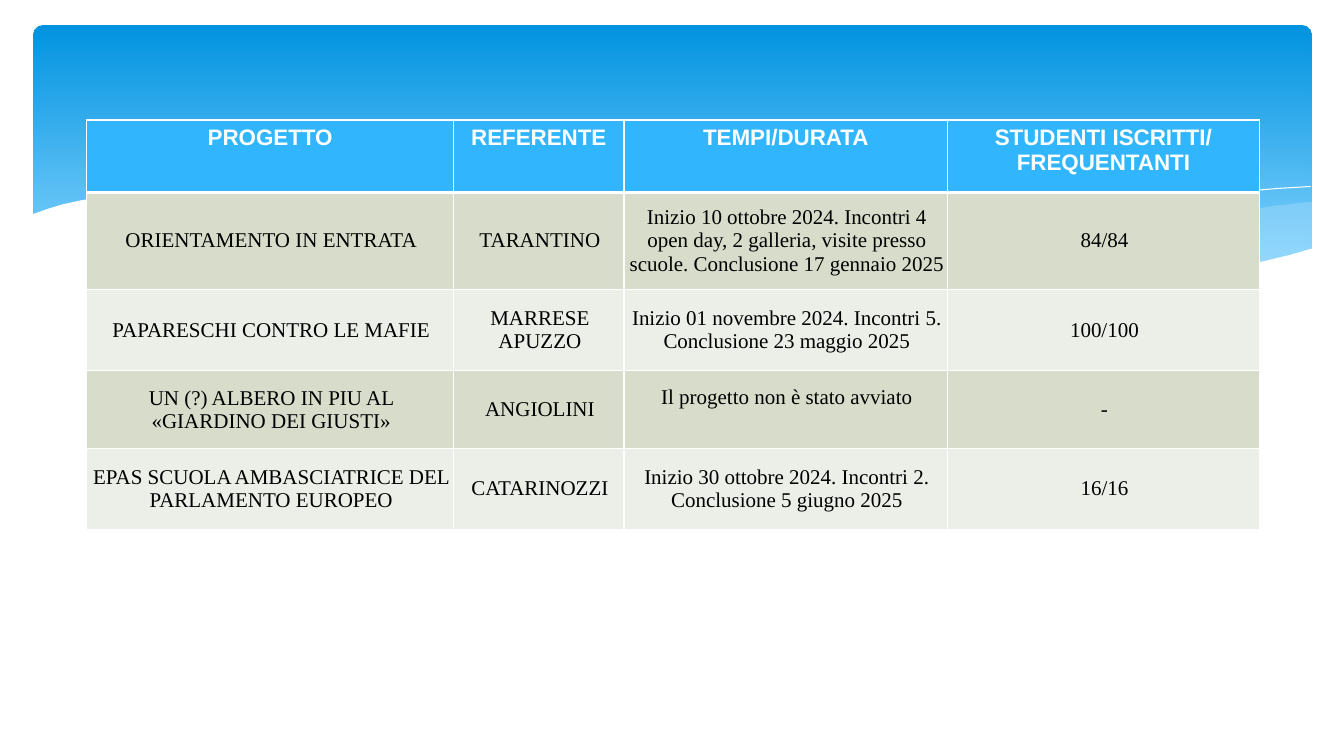
from lxml import etree
from pptx import Presentation
from pptx.dml.color import RGBColor
from pptx.enum.shapes import MSO_SHAPE
from pptx.enum.text import MSO_ANCHOR, PP_ALIGN
from pptx.oxml.ns import qn
from pptx.util import Inches, Pt

ROUNDED = MSO_SHAPE.ROUNDED_RECTANGLE
CENTER = PP_ALIGN.CENTER
TOP, MIDDLE = MSO_ANCHOR.TOP, MSO_ANCHOR.MIDDLE

WHITE = RGBColor(0xFF, 0xFF, 0xFF)
BLACK = RGBColor(0x00, 0x00, 0x00)
DEEP = RGBColor(0x02, 0x93, 0xE0)
SKY = RGBColor(0x83, 0xD3, 0xFE)
MIST = RGBColor(0xC6, 0xE7, 0xFC)
HEAD = RGBColor(0x31, 0xB6, 0xFD)
SAGE = RGBColor(0xD8, 0xDD, 0xCB)
PALE = RGBColor(0xEC, 0xEF, 0xE7)

RIGHT_WAVE = [
    (13.01, 2), (12.65, 2.04), (12.27, 2.1), (11.88, 2.16), (11.47, 2.23),
    (10.73, 2.37), (10.05, 2.48), (9.41, 2.57), (8.82, 2.65), (9.21, 2.69),
    (9.58, 2.72), (9.93, 2.75), (10.25, 2.77), (10.71, 2.78), (11.13, 2.77),
    (11.51, 2.75), (11.86, 2.72), (12.18, 2.67), (12.47, 2.62),
    (12.66, 2.57), (12.84, 2.52), (13.01, 2.47),
]
MID_WAVE = [
    (11.9, 2.73), (11.54, 2.69), (11.16, 2.65), (10.76, 2.6), (10.34, 2.54),
    (9.89, 2.47), (9.41, 2.4), (8.91, 2.31), (8.39, 2.22), (7.98, 2.14),
    (7.59, 2.08), (7.21, 2.03), (6.86, 1.98), (6.52, 1.94), (6.19, 1.91),
    (5.89, 1.89), (5.6, 1.87), (5.32, 1.86), (5.06, 1.85), (4.82, 1.85),
    (4.37, 1.87), (3.82, 1.91), (4.31, 1.96), (4.83, 2.03), (5.39, 2.11),
    (5.99, 2.22), (6.54, 2.32), (7.06, 2.4), (7.55, 2.48), (8.02, 2.55),
    (8.46, 2.61), (8.87, 2.66), (9.26, 2.7), (9.63, 2.74), (9.98, 2.76),
    (10.3, 2.77), (10.61, 2.78), (11.18, 2.78), (11.56, 2.76),
]
LONG_LINE = [
    (4.12, 1.95), (4.38, 1.92), (4.7, 1.89), (5.16, 1.87), (5.77, 1.87),
    (6.25, 1.89), (6.8, 1.92), (7.42, 1.97), (8.11, 2.04), (8.86, 2.13),
    (9.7, 2.26), (10.6, 2.41), (11.58, 2.61), (12.1, 2.72),
]
SHORT_LINE = [
    (8.18, 2.57), (8.7, 2.46), (9.27, 2.35), (9.97, 2.23), (10.75, 2.1),
    (11.55, 1.99), (11.94, 1.94), (12.32, 1.9), (12.67, 1.87), (13, 1.85),
]
FRONT_WAVE = [
    (13.03, 2.46), (12.79, 2.53), (12.54, 2.59), (12.27, 2.65),
    (11.98, 2.69), (11.67, 2.73), (11.34, 2.75), (10.97, 2.77),
    (10.58, 2.76), (10.15, 2.75), (9.69, 2.72), (9.18, 2.68), (8.63, 2.62),
    (8.04, 2.54), (7.4, 2.45), (6.71, 2.33), (5.96, 2.2), (5.21, 2.07),
    (4.53, 1.97), (3.9, 1.9), (3.33, 1.86), (2.82, 1.84), (2.35, 1.84),
    (1.94, 1.85), (1.58, 1.87), (1.27, 1.91), (1.01, 1.95), (0.79, 1.99),
    (0.61, 2.03), (0.48, 2.07), (0.31, 2.13), (0.31, 3.29), (13.03, 3.29),
]

COLS = [3.64, 1.69, 3.21, 3.09]
HEIGHTS = [0.72, 0.96, 0.81, 0.77, 0.8]
ROWS = [
    ["PROGETTO", "REFERENTE", "TEMPI/DURATA",
     "STUDENTI ISCRITTI/\nFREQUENTANTI"],
    ["ORIENTAMENTO IN ENTRATA", "TARANTINO",
     "Inizio 10 ottobre 2024. Incontri 4 open day, 2 galleria, "
     "visite presso scuole. Conclusione 17 gennaio 2025", "84/84"],
    ["PAPARESCHI CONTRO LE MAFIE", "MARRESE\nAPUZZO",
     "Inizio 01 novembre 2024. Incontri 5. Conclusione 23 maggio 2025",
     "100/100"],
    ["UN (?) ALBERO IN PIU AL «GIARDINO DEI GIUSTI»", "ANGIOLINI",
     "Il progetto non è stato avviato", "-"],
    ["EPAS SCUOLA AMBASCIATRICE DEL PARLAMENTO EUROPEO", "CATARINOZZI",
     "Inizio 30 ottobre 2024. Incontri 2. Conclusione 5 giugno 2025",
     "16/16"],
]


def add_panel(slide):
    """Add the rounded panel with its blue gradient."""
    panel = slide.shapes.add_shape(
        ROUNDED, Inches(0.33), Inches(0.25), Inches(12.68), Inches(2.7))
    panel.adjustments[0] = 0.034
    panel.shadow.inherit = False
    panel.line.fill.background()
    panel.fill.gradient()
    panel.fill.gradient_angle = 270
    stops = panel.fill.gradient_stops
    for stop, color, place in zip(stops, (DEEP, SKY), (0, 0.9)):
        stop.color.rgb = color
        stop.position = place


def add_path(slide, points, closed):
    """Add an outline through points given in inches."""
    spots = [(Inches(x), Inches(y)) for x, y in points]
    pen = slide.shapes.build_freeform(*spots[0])
    pen.add_line_segments(spots[1:], close=closed)
    shape = pen.convert_to_shape()
    shape.shadow.inherit = False
    return shape


def add_wave(slide, points, color, alpha=100):
    """Add a filled wave, alpha being its opacity in percent."""
    wave = add_path(slide, points, True)
    wave.line.fill.background()
    wave.fill.solid()
    wave.fill.fore_color.rgb = color
    if alpha < 100:
        tint = wave.fill._xPr.find(qn("a:solidFill"))[0]
        etree.SubElement(tint, qn("a:alpha"), val=str(alpha * 1000))


def add_curve(slide, points):
    """Add a white hairline curve."""
    curve = add_path(slide, points, False)
    curve.fill.background()
    curve.line.color.rgb = WHITE
    curve.line.width = Pt(0)


def set_edges(cell, top, bottom):
    """Give a cell white borders, with top and bottom widths in points."""
    props = cell._tc.get_or_add_tcPr()
    widths = {"a:lnL": 1, "a:lnR": 1, "a:lnT": top, "a:lnB": bottom}
    for i, (tag, width) in enumerate(widths.items()):
        edge = etree.Element(qn(tag), w=str(Pt(width)))
        fill = etree.SubElement(edge, qn("a:solidFill"))
        etree.SubElement(fill, qn("a:srgbClr"), val=str(WHITE))
        props.insert(i, edge)


def fill_cell(cell, text, row):
    """Write and style one cell of the given row."""
    head = row == 0
    cell.text = text
    cell.vertical_anchor = TOP if head else MIDDLE
    cell.margin_left = Inches(0.1 if head else 0.04)
    cell.margin_right = Inches(0.1 if head else 0.02)
    cell.margin_top = cell.margin_bottom = Inches(0.05 if head else 0.01)
    cell.fill.solid()
    cell.fill.fore_color.rgb = HEAD if head else SAGE if row % 2 else PALE
    for para in cell.text_frame.paragraphs:
        para.alignment = CENTER
        para.font.name = "Arial" if head else "Times New Roman"
        para.font.size = Pt(16 if head else 15)
        para.font.bold = head
        para.font.color.rgb = WHITE if head else BLACK
    set_edges(cell, 3 if row == 1 else 1, 3 if head else 1)


def add_grid(slide):
    """Add the table of projects."""
    table = slide.shapes.add_table(
        len(ROWS), len(COLS), Inches(0.86), Inches(1.19),
        Inches(sum(COLS)), Inches(sum(HEIGHTS))).table
    for col, width in zip(table.columns, COLS):
        col.width = Inches(width)
    for i, (height, texts) in enumerate(zip(HEIGHTS, ROWS)):
        table.rows[i].height = Inches(height)
        for j, text in enumerate(texts):
            fill_cell(table.cell(i, j), text, i)
    table.cell(3, 2).margin_bottom = Inches(0.25)


def main():
    """Build the slide and save it."""
    deck = Presentation()
    deck.slide_width, deck.slide_height = Inches(13.33), Inches(7.5)
    slide = deck.slides.add_slide(deck.slide_layouts[6])
    add_panel(slide)
    add_wave(slide, RIGHT_WAVE, MIST, 29)
    add_wave(slide, MID_WAVE, MIST, 40)
    add_curve(slide, LONG_LINE)
    add_curve(slide, SHORT_LINE)
    add_wave(slide, FRONT_WAVE, WHITE)
    add_grid(slide)
    deck.save("out.pptx")


if __name__ == "__main__":
    main()
